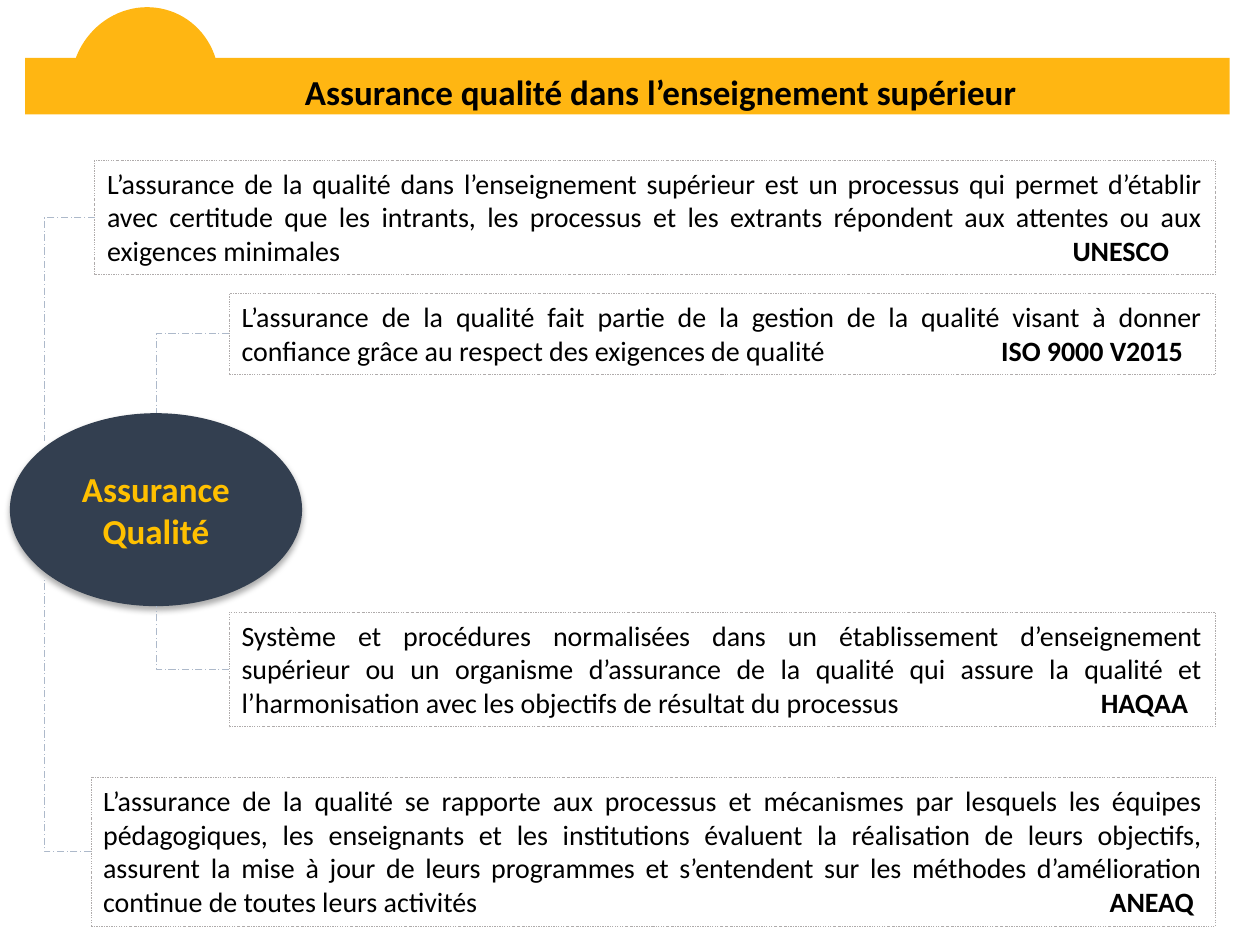
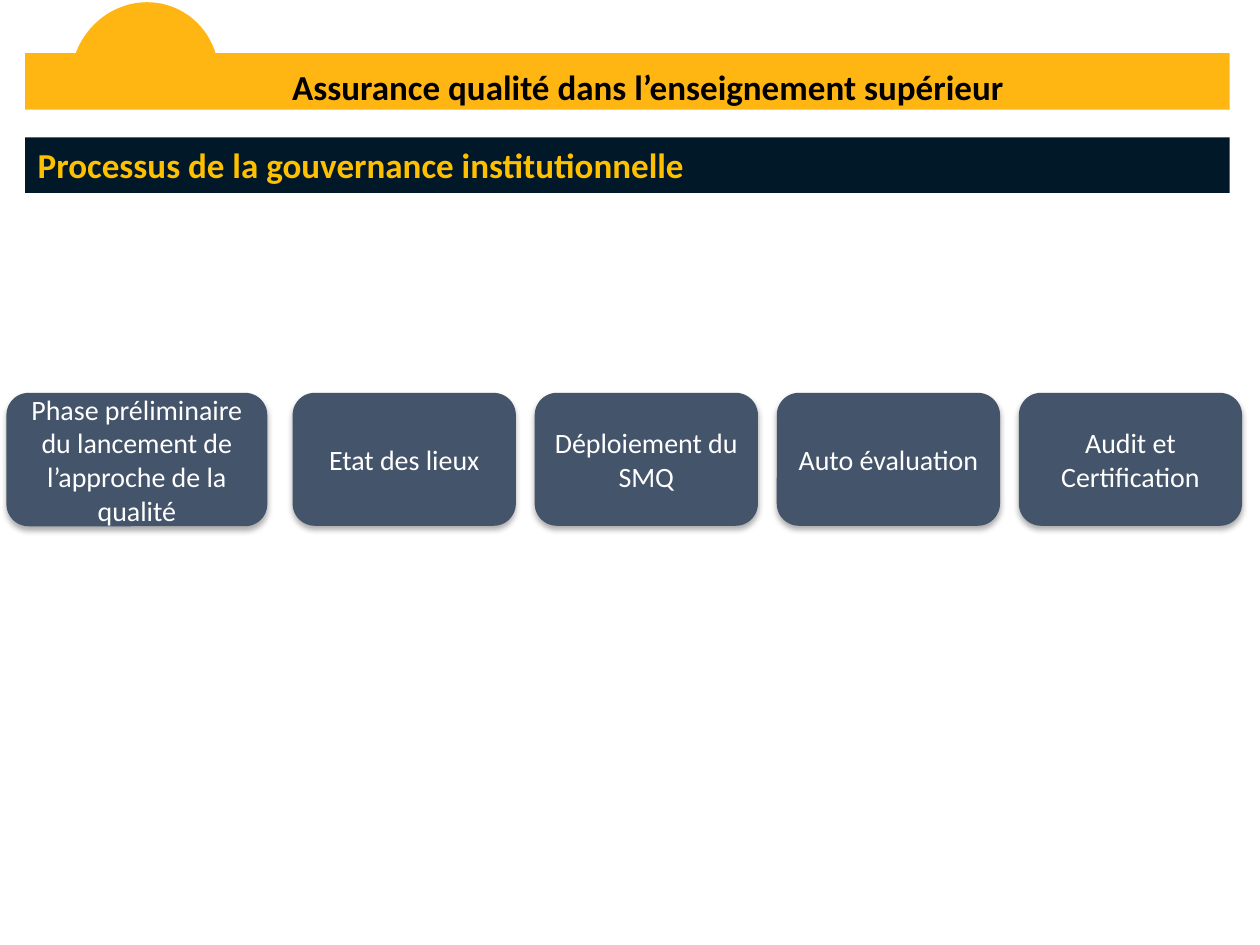
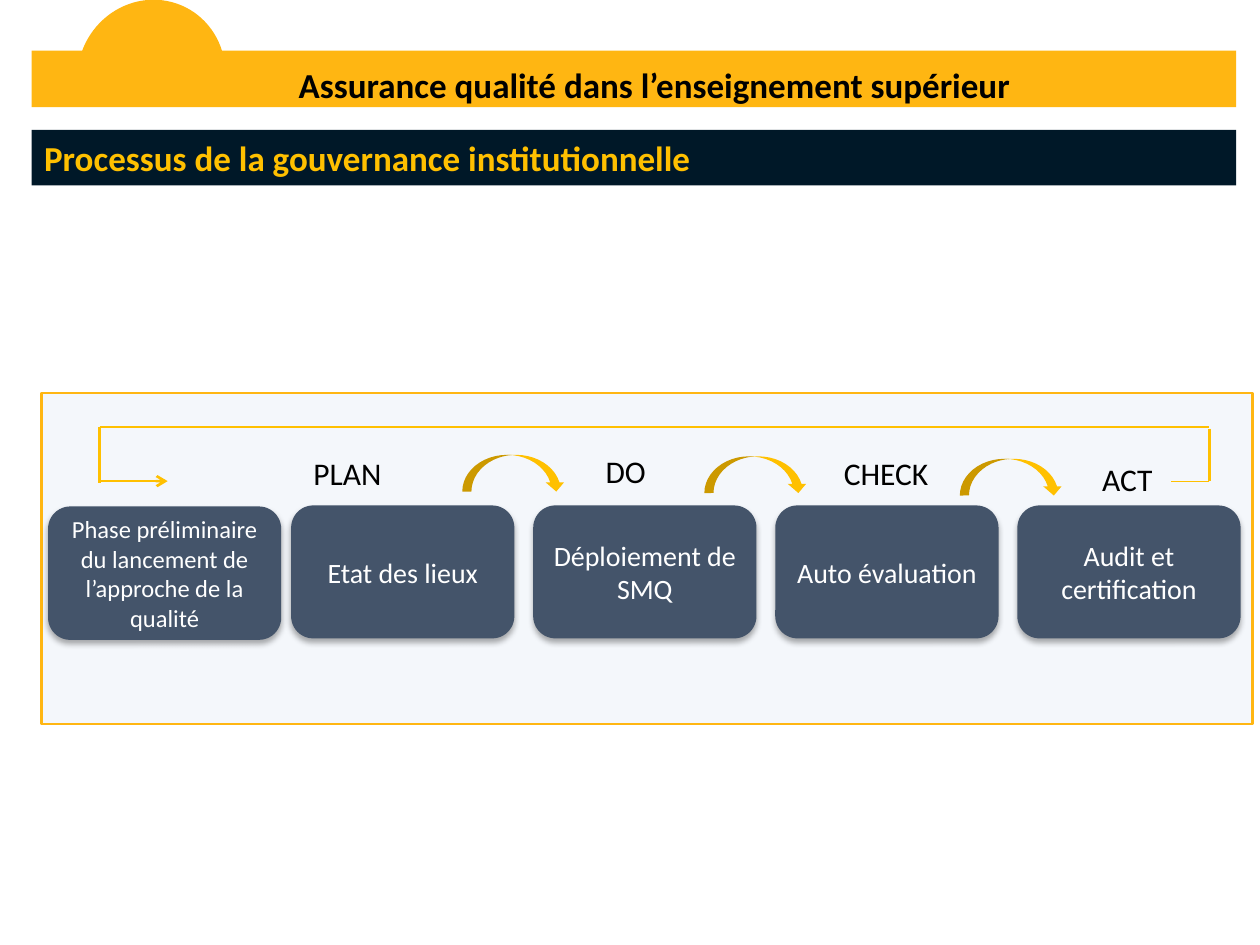
from pptx import Presentation
from pptx.dml.color import RGBColor
from pptx.enum.dml import MSO_LINE as Dash
from pptx.enum.shapes import MSO_CONNECTOR as Link, MSO_SHAPE as Kind
from pptx.enum.text import MSO_ANCHOR as Anchor, PP_ALIGN as Align
from pptx.oxml import parse_xml
from pptx.oxml.ns import nsdecls, qn
from pptx.util import Cm, Pt
from lxml import etree

GOLD = RGBColor(0xFF, 0xB6, 0x12)
AMBER = RGBColor(0xFF, 0xC0, 0x00)
NIGHT = RGBColor(0x00, 0x18, 0x28)
NAVY = RGBColor(0x33, 0x3F, 0x50)
SLATE = RGBColor(0x44, 0x54, 0x6A)
MIST = RGBColor(0xAD, 0xB9, 0xCA)
GREY = RGBColor(0xAF, 0xAB, 0xAB)
SKY = RGBColor(0x8F, 0xAA, 0xDC)
BLACK = RGBColor(0x00, 0x00, 0x00)
WHITE = RGBColor(0xFF, 0xFF, 0xFF)

SHADE = (f'<a:effectLst {nsdecls("a")}><a:outerShdw blurRad="44450" dist="27940" '
         'dir="5400000" algn="ctr" rotWithShape="0"><a:srgbClr val="000000">'
         '<a:alpha val="32000"/></a:srgbClr></a:outerShdw></a:effectLst>')


def write(shape, text, size=16, color=BLACK, bold=False, align=Align.LEFT,
          anchor=Anchor.TOP, source=None, stop=0):
    """Write text; a source name goes in bold, ending at a right tab stop."""
    frame = shape.text_frame
    frame.word_wrap = True
    frame.vertical_anchor = anchor
    para = frame.paragraphs[0]
    para.alignment = align
    parts = [(text, bold)]
    if source:
        tabs = etree.SubElement(para._p.get_or_add_pPr(), qn("a:tabLst"))
        etree.SubElement(tabs, qn("a:tab"), pos=str(Cm(stop)), algn="r")
        parts = [(text + "\t", bold), (source, True)]
    for words, strong in parts:
        run = para.add_run()
        run.text = words
        font = run.font
        font.name, font.size, font.bold = "Calibri", Pt(size), strong
        font.color.rgb = color


def draw(slide, kind, at, fill=None, line=None, width=1.5, dash=None, shade=False):
    """Add a preset shape at left, top, width, height in centimetres."""
    shape = slide.shapes.add_shape(kind, *map(Cm, at))
    shape.shadow.inherit = False
    if fill is None:
        shape.fill.background()
    else:
        shape.fill.solid()
        shape.fill.fore_color.rgb = fill
    if line is None:
        shape.line.fill.background()
    else:
        shape.line.color.rgb = line
        shape.line.width = Pt(width)
        shape.line.dash_style = dash
    if shade:
        props = shape._element.spPr
        props.replace(props.find(qn("a:effectLst")), parse_xml(SHADE))
    return shape


deck = Presentation()
deck.slide_width, deck.slide_height = Cm(25.4), Cm(19.05)

# Shared header: shift across and down, title width, top of the dark band
heads = [(0, 0, 15.52, None), (0, -0.1, 15.01, 2.77), (0.13, -0.15, 15.01, 2.62)]
slides = []
for dx, dy, wide, top in heads:
    slide = deck.slides.add_slide(deck.slide_layouts[5])
    slides.append(slide)
    draw(slide, Kind.RECTANGLE, (0.51 + dx, 1.17 + dy, 24.28, 1.14), GOLD)
    dome = draw(slide, Kind.CHORD, (1.37 + dx, 0.2 + dy, 3.1, 2.97), GOLD)
    dome.rotation = 112.9
    title = slide.shapes.title
    title.left, title.top = Cm(5.56 + dx), Cm(1.3 + dy)
    title.width, title.height = Cm(wide), Cm(1.12)
    write(title, "Assurance qualité dans l’enseignement supérieur", size=20,
          bold=True, align=Align.CENTER)
    slide.shapes._spTree.append(title._element)  # bring in front of the band
    if top:
        band = draw(slide, Kind.RECTANGLE, (0.51 + dx, top, 24.28, 1.12), NIGHT)
        write(band, "Processus de la gouvernance institutionnelle", size=20,
              color=AMBER, bold=True)
first, second, third = slides

# Slide 1: definitions as left, top, height, text, source, right end of source
EDGE = 24.49
notes = [
    (1.91, 3.23, 2.31, "L’assurance de la qualité dans l’enseignement supérieur est un "
     "processus qui permet d’établir avec certitude que les intrants, les processus et "
     "les extrants répondent aux attentes ou aux exigences minimales", "UNESCO", 23.57),
    (4.62, 12.34, 2.31, "Système et procédures normalisées dans un établissement "
     "d’enseignement supérieur ou un organisme d’assurance de la qualité qui assure la "
     "qualité et l’harmonisation avec les objectifs de résultat du processus",
     "HAQAA", 23.95),
    (1.83, 15.67, 3, "L’assurance de la qualité se rapporte aux processus et mécanismes "
     "par lesquels les équipes pédagogiques, les enseignants et les institutions évaluent "
     "la réalisation de leurs objectifs, assurent la mise à jour de leurs programmes et "
     "s’entendent sur les méthodes d’amélioration continue de toutes leurs activités",
     "ANEAQ", 24.07),
    (4.62, 5.92, 1.63, "L’assurance de la qualité fait partie de la gestion de la qualité "
     "visant à donner confiance grâce au respect des exigences de qualité",
     "ISO 9000 V2015", 23.85),
]
for left, top, high, text, source, end in notes:
    box = draw(first, Kind.RECTANGLE, (left, top, EDGE - left, high),
               line=GREY, width=0.25, dash=Dash.DASH_DOT)
    write(box, text, align=Align.JUSTIFY, source=source, stop=end - left - 0.25)
hub = draw(first, Kind.OVAL, (0.2, 8.33, 5.89, 3.89), NAVY, shade=True)
write(hub, "Assurance Qualité", size=20, color=AMBER, bold=True,
      align=Align.CENTER, anchor=Anchor.MIDDLE)

# Slide 3: panel, arrows and labels of the cycle
panel = draw(third, Kind.RECTANGLE, (0.84, 7.92, 24.41, 6.68), SKY, GOLD)
tint = panel._element.spPr.find(qn("a:solidFill"))[0]
etree.SubElement(tint, qn("a:alpha"), val="9000")
for left, top in [(9.32, 9.17), (14.2, 9.2), (19.35, 9.25)]:
    draw(third, Kind.CURVED_DOWN_ARROW, (left, top, 2.08, 0.74), AMBER)
labels = [("PLAN", 5, 9.02, 4.01, Align.CENTER), ("DO", 11.96, 8.99, 2.11, Align.LEFT),
          ("CHECK", 16.76, 9.02, 2.46, Align.LEFT), ("ACT", 21.97, 9.14, 2.11, Align.LEFT)]
for text, left, top, wide, align in labels:
    label = third.shapes.add_textbox(Cm(left), Cm(top), Cm(wide), Cm(0.64))
    write(label, text, size=18, align=align)

# Slides 2 and 3: the wider first phase, then four on an even step
START = "Phase préliminaire du lancement de l’approche de la qualité"
STEP = 4.88
rows = [
    (second, (0.13, 7.92, 5.26, 2.69), 16, 5.9, 7.92,
     ["Etat des lieux", "Déploiement du SMQ", "Auto évaluation", "Audit et Certification"]),
    (third, (0.97, 10.21, 4.7, 2.69), 14, 5.87, 10.19,
     ["Etat des lieux", "Déploiement de SMQ", "Auto évaluation", "Audit et certification"]),
]
for slide, place, size, left, top, names in rows:
    cells = [(START, place, size)]
    cells += [(name, (left + i * STEP, top, 4.5, 2.68), 16) for i, name in enumerate(names)]
    for text, at, points in cells:
        phase = draw(slide, Kind.ROUNDED_RECTANGLE, at, SLATE, shade=True)
        write(phase, text, size=points, color=WHITE, align=Align.CENTER,
              anchor=Anchor.MIDDLE)

# Connectors: elbows from box to hub on slide 1, the return loop on slide 3
elbows = [(1.91, 4.39, 0.89, 8.89), (4.62, 6.73, 3.15, 8.33),
          (4.62, 13.49, 3.15, 12.22), (1.83, 17.17, 0.89, 11.63)]
loop = [(2.01, 9.7, 3.38, 9.7, 1.5), (2.01, 9.73, 2.01, 8.61, 1.5),
        (2.01, 8.61, 24.38, 8.61, 1.5), (24.38, 8.64, 24.38, 9.7, 1.5),
        (24.38, 9.7, 23.6, 9.7, 0.5)]
links = [(first, Link.ELBOW, ends, MIST, 0.5, Dash.LONG_DASH_DOT) for ends in elbows]
links += [(third, Link.STRAIGHT, ends, AMBER, width, None) for *ends, width in loop]
for slide, kind, ends, color, width, dash in links:
    link = slide.shapes.add_connector(kind, *map(Cm, ends))
    link.line.color.rgb = color
    link.line.width = Pt(width)
    link.line.dash_style = dash
    props = link._element.spPr
    if kind == Link.ELBOW:
        props.find(qn("a:prstGeom")).set("prst", "bentConnector2")
    if ends == list(loop[0][:4]):
        etree.SubElement(props.find(qn("a:ln")), qn("a:tailEnd"), type="arrow")
    etree.SubElement(props, qn("a:effectLst"))

deck.save("out.pptx")
